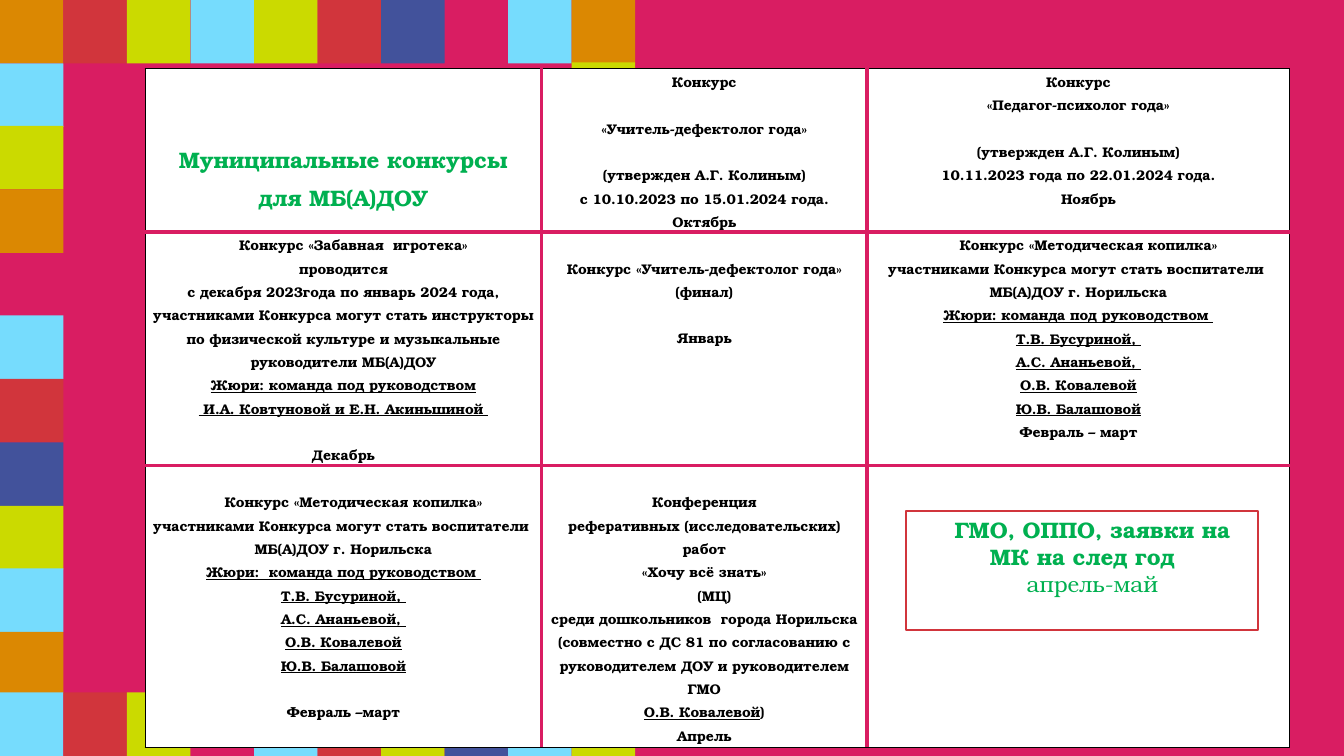
from dataclasses import dataclass

from lxml import etree
from pptx import Presentation
from pptx.dml.color import RGBColor
from pptx.enum.shapes import MSO_SHAPE
from pptx.enum.text import MSO_ANCHOR, PP_ALIGN
from pptx.oxml.ns import qn
from pptx.util import Inches, Pt

RECTANGLE = MSO_SHAPE.RECTANGLE
CENTER = PP_ALIGN.CENTER
TOP = MSO_ANCHOR.TOP


@dataclass(frozen=True)
class Theme:
    font: str = "TeX Gyre Bonum"
    body_size: int = 10
    heading_size: int = 16
    pink: str = "D91D62"
    orange: str = "DB8802"
    sky: str = "76DCFD"
    lime: str = "CBDA00"
    red: str = "D1353C"
    blue: str = "42529B"
    green: str = "00B050"
    black: str = "000000"
    white: str = "FFFFFF"


@dataclass(frozen=True)
class Line:
    """A paragraph; gap is the space above it, counted in body lines."""
    text: str
    gap: int = 0
    indent: float = 0
    underline: bool = False
    tail: str = ""
    bold: bool = True


THEME = Theme()
LINE_PITCH = 0.23
FIRST_INDENT = 0.2

TILE = 0.63
BOTTOM_TILE_TOP = 6.87
# None leaves the pink background open
LEFT_TILES = [THEME.orange, THEME.sky, THEME.lime, THEME.orange, None, THEME.sky,
              THEME.red, THEME.blue, THEME.lime, THEME.sky, THEME.orange]
TOP_TILES = [THEME.red, THEME.lime, THEME.sky, THEME.lime, THEME.red, THEME.blue,
             None, THEME.sky, THEME.orange]
BOTTOM_TILES = [THEME.sky, THEME.red, THEME.lime, None, THEME.sky, THEME.red,
                THEME.lime, THEME.blue, THEME.sky, THEME.lime]

COLUMN_WIDTHS = [3.93, 3.23, 4.19]
ROW_HEIGHTS = [1.62, 2.32, 2.8]

METHODICAL_CONTEST = [
    Line("Конкурс «Методическая копилка»", indent=FIRST_INDENT),
    Line("участниками Конкурса могут стать воспитатели  МБ(А)ДОУ г. Норильска"),
]
METHODICAL_JURY = [Line(name, underline=True) for name in (
    "Т.В. Бусуриной, ", "А.С. Ананьевой, ", "О.В. Ковалевой", "Ю.В. Балашовой")]

# Each cell: blank lines above the text, then its paragraphs
CONTESTS = [
    [
        (3, [Line("Муниципальные конкурсы"), Line("для МБ(А)ДОУ")]),
        (0, [Line("Конкурс"),
             Line("«Учитель-дефектолог года»", gap=1),
             Line("(утвержден А.Г. Колиным)", gap=1),
             Line("с 10.10.2023 по 15.01.2024 года."),
             Line("Октябрь")]),
        (0, [Line("Конкурс"),
             Line("«Педагог-психолог года»"),
             Line("(утвержден А.Г. Колиным)", gap=1),
             Line("10.11.2023 года по 22.01.2024 года."),
             Line("Ноябрь", indent=FIRST_INDENT)]),
    ],
    [
        (0, [Line("Конкурс «Забавная  игротека»", indent=FIRST_INDENT),
             Line("проводится"),
             Line("с декабря 2023года по январь 2024 года,"),
             Line("участниками Конкурса могут стать инструкторы по физической "
                  "культуре и музыкальные руководители МБ(А)ДОУ"),
             Line("Жюри: команда под руководством", underline=True),
             Line(" И.А. Ковтуновой и Е.Н. Акиньшиной ", underline=True),
             Line("Декабрь", gap=1)]),
        (1, [Line("Конкурс «Учитель-дефектолог года»"),
             Line("(финал)"),
             Line("Январь", gap=1)]),
        (0, METHODICAL_CONTEST
            + [Line("Жюри: команда под руководством ", underline=True)]
            + METHODICAL_JURY + [Line("Февраль – март")]),
    ],
    [
        (1, METHODICAL_CONTEST
            + [Line("Жюри:  команда под руководством ", underline=True)]
            + METHODICAL_JURY + [Line("Февраль –март", gap=1)]),
        (1, [Line("Конференция"),
             Line("реферативных (исследовательских) работ"),
             Line("«Хочу всё знать»"),
             Line("(МЦ)", indent=FIRST_INDENT),
             Line("среди дошкольников  города Норильска"),
             Line("(совместно с ДС 81 по согласованию с руководителем ДОУ "
                  "и руководителем ГМО"),
             Line("О.В. Ковалевой", underline=True, tail=")"),
             Line("Апрель")]),
        (0, []),
    ],
]
YEAR_END = [
    Line("ГМО, ОППО, заявки на МК на след год", indent=FIRST_INDENT),
    Line("апрель-май", indent=FIRST_INDENT, bold=False),
]


def rgb(color):
    return RGBColor.from_string(color)


def add_tile(slide, left, top, color):
    if color is None:
        return
    tile = slide.shapes.add_shape(RECTANGLE, Inches(left), Inches(top),
                                  Inches(TILE), Inches(TILE))
    tile.shadow.inherit = False
    tile.fill.solid()
    tile.fill.fore_color.rgb = rgb(color)
    tile.line.fill.background()


def add_mosaic(slide):
    for i, color in enumerate(LEFT_TILES):
        add_tile(slide, 0, round(i * 0.627, 2), color)
    for i, color in enumerate(TOP_TILES, start=1):
        add_tile(slide, i * TILE, 0, color)
    add_tile(slide, len(TOP_TILES) * TILE, 0.62, THEME.lime)
    for i, color in enumerate(BOTTOM_TILES):
        add_tile(slide, i * TILE, BOTTOM_TILE_TOP, color)


def write_lines(frame, lines, size, color, spacing):
    for i, line in enumerate(lines):
        paragraph = frame.paragraphs[0] if i == 0 else frame.add_paragraph()
        paragraph.alignment = CENTER
        paragraph.line_spacing = spacing
        if line.gap:
            paragraph.space_before = Pt(line.gap * LINE_PITCH * 72)
        if line.indent:
            properties = paragraph._p.get_or_add_pPr()
            properties.set("marL", "0")
            properties.set("indent", str(Inches(line.indent)))
        font = paragraph.font
        font.name, font.size, font.bold = THEME.font, Pt(size), line.bold
        font.color.rgb = rgb(color)
        main_run = paragraph.add_run()
        main_run.text = line.text
        if line.underline:
            main_run.font.underline = True
        if line.tail:
            paragraph.add_run().text = line.tail


def set_borders(cell, outer_sides):
    """Draw black outer edges and thick pink inner edges."""
    properties = cell._tc.get_or_add_tcPr()
    for i, side in enumerate("LRTB"):
        color, width = (THEME.black, 1) if side in outer_sides else (THEME.pink, 3)
        border = etree.Element(qn(f"a:ln{side}"), w=str(Pt(width)))
        fill = etree.SubElement(border, qn("a:solidFill"))
        etree.SubElement(fill, qn("a:srgbClr"), val=color)
        properties.insert(i, border)


def add_contest_table(slide):
    table = slide.shapes.add_table(
        len(ROW_HEIGHTS), len(COLUMN_WIDTHS), Inches(1.44), Inches(0.68),
        Inches(sum(COLUMN_WIDTHS)), Inches(sum(ROW_HEIGHTS))).table
    table.first_row = table.horz_banding = False
    for column, width in zip(table.columns, COLUMN_WIDTHS):
        column.width = Inches(width)
    last_row, last_column = len(ROW_HEIGHTS) - 1, len(COLUMN_WIDTHS) - 1
    for r, contests in enumerate(CONTESTS):
        table.rows[r].height = Inches(ROW_HEIGHTS[r])
        for c, (blank_above, lines) in enumerate(contests):
            cell = table.cell(r, c)
            cell.margin_left = cell.margin_right = Inches(0.06)
            cell.margin_top = Inches(blank_above * LINE_PITCH)
            cell.margin_bottom = 0
            cell.fill.solid()
            cell.fill.fore_color.rgb = rgb(THEME.white)
            edges = {"L": c == 0, "R": c == last_column,
                     "T": r == 0, "B": r == last_row}
            set_borders(cell, [side for side, outer in edges.items() if outer])
            is_heading = r == c == 0
            write_lines(cell.text_frame, lines,
                        THEME.heading_size if is_heading else THEME.body_size,
                        THEME.green if is_heading else THEME.black, 1.15)


def add_year_end_box(slide):
    box = slide.shapes.add_shape(RECTANGLE, Inches(8.99), Inches(5.07),
                                 Inches(3.49), Inches(1.18))
    box.shadow.inherit = False
    box.fill.background()
    box.line.color.rgb = rgb(THEME.red)
    box.line.width = Pt(1.5)
    box.text_frame.word_wrap = True
    box.text_frame.vertical_anchor = TOP
    write_lines(box.text_frame, YEAR_END, THEME.heading_size, THEME.green, 1.0)


def main():
    presentation = Presentation()
    presentation.slide_width = Inches(13.33)
    presentation.slide_height = Inches(7.5)
    slide = presentation.slides.add_slide(presentation.slide_layouts[6])
    slide.background.fill.solid()
    slide.background.fill.fore_color.rgb = rgb(THEME.pink)
    add_mosaic(slide)
    add_contest_table(slide)
    add_year_end_box(slide)
    presentation.save("out.pptx")


if __name__ == "__main__":
    main()
